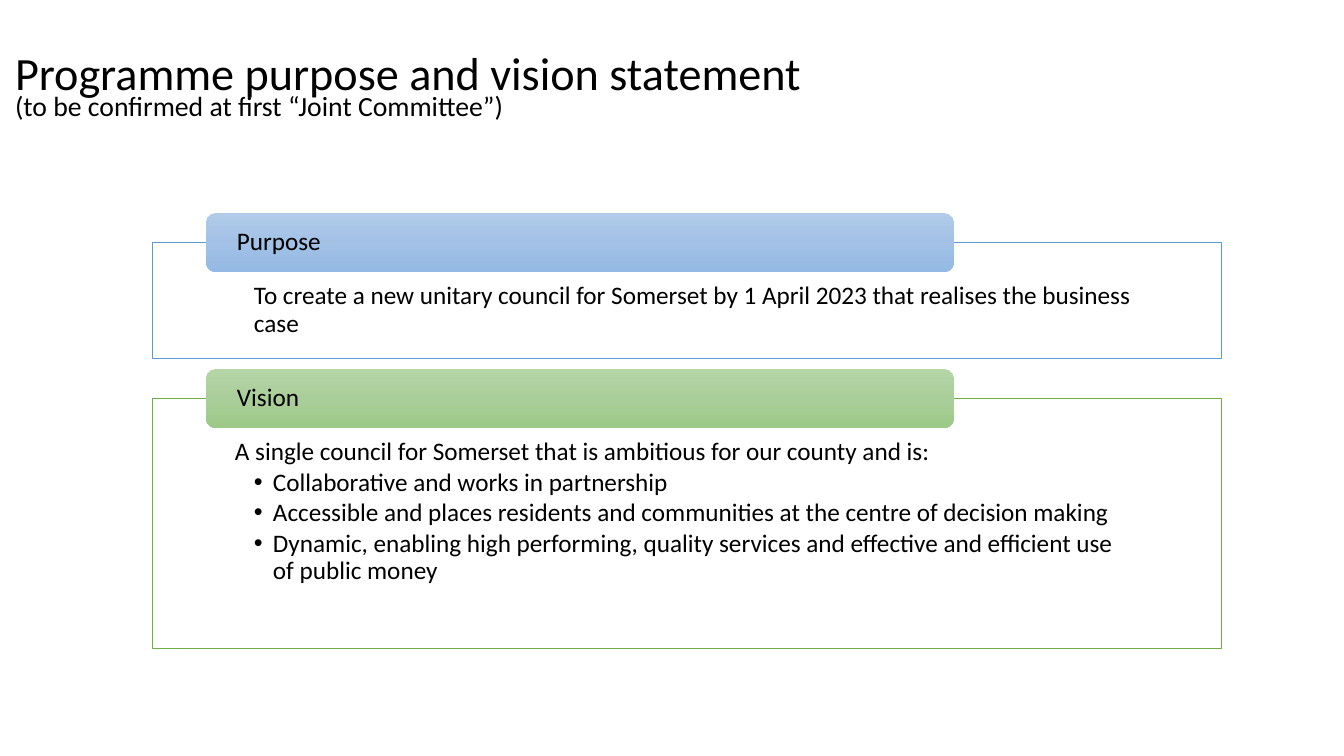
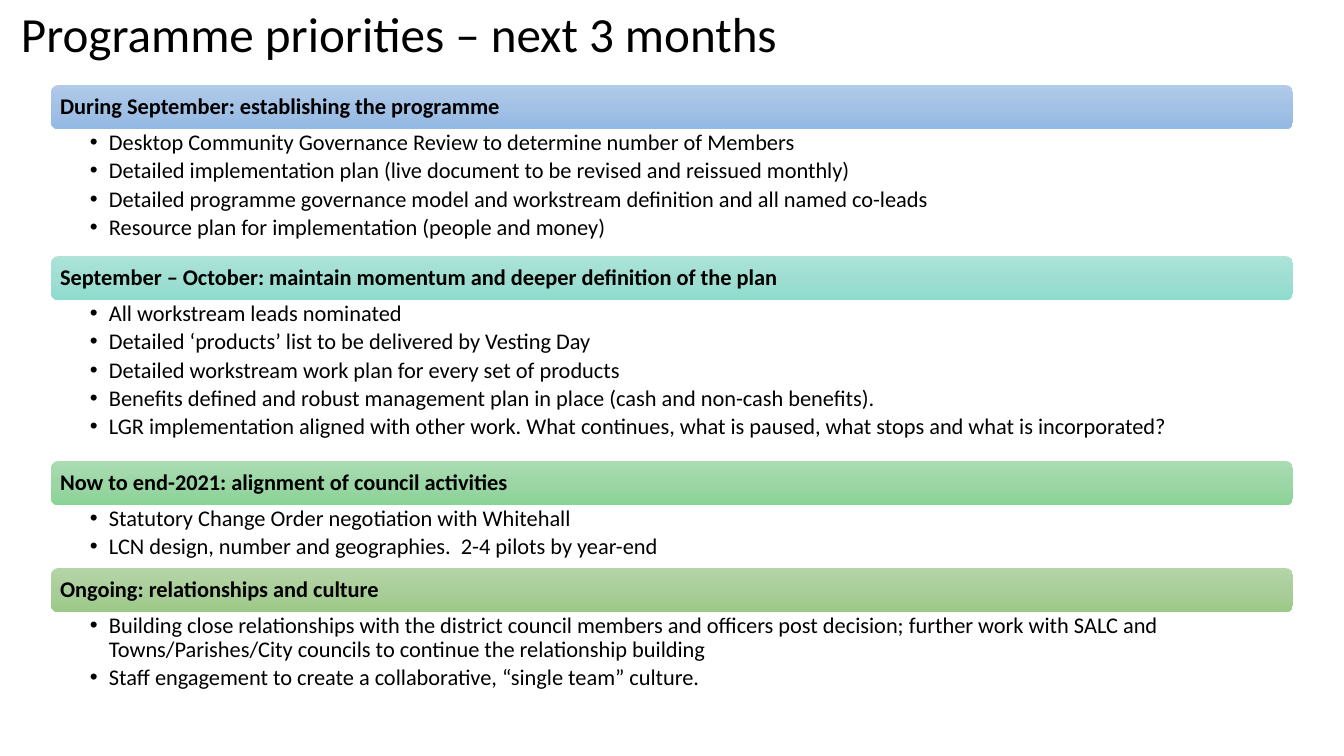
"""Build two programme slides: purpose and vision, then priorities."""
from copy import deepcopy

from lxml.etree import SubElement
from pptx import Presentation
from pptx.dml.color import RGBColor
from pptx.enum.shapes import MSO_SHAPE
from pptx.enum.text import MSO_ANCHOR, MSO_AUTO_SIZE, PP_ALIGN
from pptx.oxml.ns import qn
from pptx.util import Emu, Pt

FONT = "Calibri"
COLORS = {
    "text": "000000",
    "panel": "FFFFFF",
    "blue_line": "5B9BD5",
    "green_line": "70AD47",
}
GRADIENTS = {
    "blue": ("B1CBE9", "A3C1E5", "93B9E4"),
    "teal": ("ADE3D9", "9FDED2", "8EDCCE"),
    "mint": ("AADCB2", "9CD6A5", "8AD396"),
    "green": ("B5D5A7", "AACE9A", "9CC987"),
}
HANG = 19
TITLE_ONLY = 5

STATEMENTS = [
    ("Purpose", "blue", "blue_line", 116, [
        (1, False, "To create a new unitary council for Somerset by 1 April 2023 "
                   "that realises the business case"),
    ]),
    ("Vision", "green", "green_line", 250, [
        (0, False, "A single council for Somerset that is ambitious for our county and is:"),
        (2, True, "Collaborative and works in partnership"),
        (2, True, "Accessible and places residents and communities at the centre "
                  "of decision making"),
        (2, True, "Dynamic, enabling high performing, quality services and effective "
                  "and efficient use of public money"),
    ]),
]

PRIORITIES = [
    ("During September: establishing the programme", "blue", 127, [
        "Desktop Community Governance Review to determine number of Members",
        "Detailed implementation plan (live document to be revised and reissued monthly)",
        "Detailed programme governance model and workstream definition and all named co-leads",
        "Resource plan for implementation (people and money)",
    ]),
    ("September – October: maintain momentum and deeper definition of the plan", "teal", 161, [
        "All workstream leads nominated",
        "Detailed ‘products’ list to be delivered by Vesting Day",
        "Detailed workstream work plan for every set of products",
        "Benefits defined and robust management plan in place (cash and non-cash benefits).",
        "LGR implementation aligned with other work. What continues, what is paused, "
        "what stops and what is incorporated?",
    ]),
    ("Now to end-2021: alignment of council activities", "mint", 63, [
        "Statutory Change Order negotiation with Whitehall",
        "LCN design, number and geographies.  2-4 pilots by year-end",
    ]),
    ("Ongoing: relationships and culture", "green", 90, [
        "Building close relationships with the district council members and officers post "
        "decision; further work with SALC and Towns/Parishes/City councils to continue "
        "the relationship building",
        "Staff engagement to create a collaborative, “single team” culture.",
    ]),
]


def px(length):
    """Turn pixels into EMU."""
    return Emu(round(length * 914400 / 100.8))


def rgb(name):
    """Look up a palette colour."""
    return RGBColor.from_string(COLORS[name])


def set_frame(shape, insets, anchor):
    """Set wrapping, insets (left, top, right, bottom) and anchor of a text frame."""
    frame = shape.text_frame
    frame.word_wrap = True
    frame.auto_size = MSO_AUTO_SIZE.NONE
    frame.vertical_anchor = anchor
    frame.margin_left, frame.margin_top, frame.margin_right, frame.margin_bottom = map(px, insets)
    return frame


def add_text(frame, index, text, size, bold=False, spacing=0.9):
    """Write one left-aligned paragraph and return it."""
    paragraph = frame.paragraphs[0] if index == 0 else frame.add_paragraph()
    paragraph.alignment = PP_ALIGN.LEFT
    paragraph.line_spacing = spacing
    run = paragraph.add_run()
    run.text = text
    run.font.name = FONT
    run.font.size = Pt(size)
    run.font.bold = bold
    run.font.color.rgb = rgb("text")
    return paragraph


def add_items(frame, items, size, space_after):
    """Write indented items, each given as (level, bulleted, text)."""
    for index, (level, bulleted, text) in enumerate(items):
        paragraph = add_text(frame, index, text, size)
        paragraph.space_after = Pt(space_after)
        properties = paragraph._p.get_or_add_pPr()
        properties.set("marL", str(px(HANG * level)))
        properties.set("indent", str(px(-HANG if bulleted else 0)))
        if bulleted:
            SubElement(properties, qn("a:buFont")).set("typeface", "Arial")
            SubElement(properties, qn("a:buChar")).set("char", "•")


def add_title(slide, box, lines, spacing, anchor):
    """Place the title placeholder and write its (text, size) lines."""
    title = slide.shapes.title
    title.left, title.top, title.width, title.height = map(px, box)
    frame = set_frame(title, (10, 5, 10, 5), anchor)
    for index, (text, size) in enumerate(lines):
        add_text(frame, index, text, size, spacing=spacing)


def add_band(slide, box, text, gradient, size, inset, bold=False):
    """Add a rounded heading band with a vertical gradient."""
    band = slide.shapes.add_shape(MSO_SHAPE.ROUNDED_RECTANGLE, *map(px, box))
    band.shadow.inherit = False
    band.line.fill.background()
    band.fill.gradient()
    band.fill.gradient_angle = 270
    stop_list = band._element.spPr.find(".//" + qn("a:gsLst"))
    stop_list.insert(1, deepcopy(stop_list[0]))
    for index, (stop, color) in enumerate(zip(band.fill.gradient_stops, GRADIENTS[gradient])):
        stop.position = index / 2
        stop.color.rgb = RGBColor.from_string(color)
    frame = set_frame(band, (inset, 0, inset, 0), MSO_ANCHOR.MIDDLE)
    add_text(frame, 0, text, size, bold)


def add_statement(slide, box, heading, gradient, line, items):
    """Add an outlined panel with a heading band across its top edge."""
    left, top, width, height = box
    panel = slide.shapes.add_shape(MSO_SHAPE.RECTANGLE, *map(px, box))
    panel.shadow.inherit = False
    panel.fill.solid()
    panel.fill.fore_color.rgb = rgb("panel")
    panel.line.color.rgb = rgb(line)
    panel.line.width = Pt(0.5)
    add_items(set_frame(panel, (83, 41, 83, 14), MSO_ANCHOR.TOP), items, 18, 2.4)
    add_band(slide, (left + 54, top - 29, width * 7 // 10, 59), heading, gradient, 18, 28)


def add_priority(slide, box, heading, gradient, items):
    """Add a heading band with a bulleted list below it."""
    left, top, width, height = box
    band_height = 44
    add_band(slide, (left, top, width, band_height), heading, gradient, 16, 7, bold=True)
    body = slide.shapes.add_textbox(
        *map(px, (left, top + band_height, width, height - band_height)))
    frame = set_frame(body, (39, 2, 12, 2), MSO_ANCHOR.TOP)
    add_items(frame, [(1, True, item) for item in items], 16, 3)


def build_statement_slide(presentation):
    """Build the purpose and vision slide."""
    slide = presentation.slides.add_slide(presentation.slide_layouts[TITLE_ONLY])
    add_title(slide, (5, 54, 1166, 73),
              [("Programme purpose and vision statement", 33),
               ("(to be confirmed at first “Joint Committee”)", 19.8)],
              0.7, MSO_ANCHOR.TOP)
    top, gap = 242, 40
    for heading, gradient, line, height, items in STATEMENTS:
        add_statement(slide, (152, top, 1069, height), heading, gradient, line, items)
        top += height + gap


def build_priority_slide(presentation):
    """Build the priorities slide."""
    slide = presentation.slides.add_slide(presentation.slide_layouts[TITLE_ONLY])
    add_title(slide, (11, 0, 1120, 74), [("Programme priorities – next 3 months", 35.1)],
              0.9, MSO_ANCHOR.MIDDLE)
    top = 85
    for heading, gradient, body_height, items in PRIORITIES:
        height = 44 + body_height
        add_priority(slide, (51, top, 1242, height), heading, gradient, items)
        top += height


def main():
    """Create and save the presentation."""
    presentation = Presentation()
    presentation.slide_width = px(1344)
    presentation.slide_height = px(756)
    build_statement_slide(presentation)
    build_priority_slide(presentation)
    presentation.save("out.pptx")


if __name__ == "__main__":
    main()
